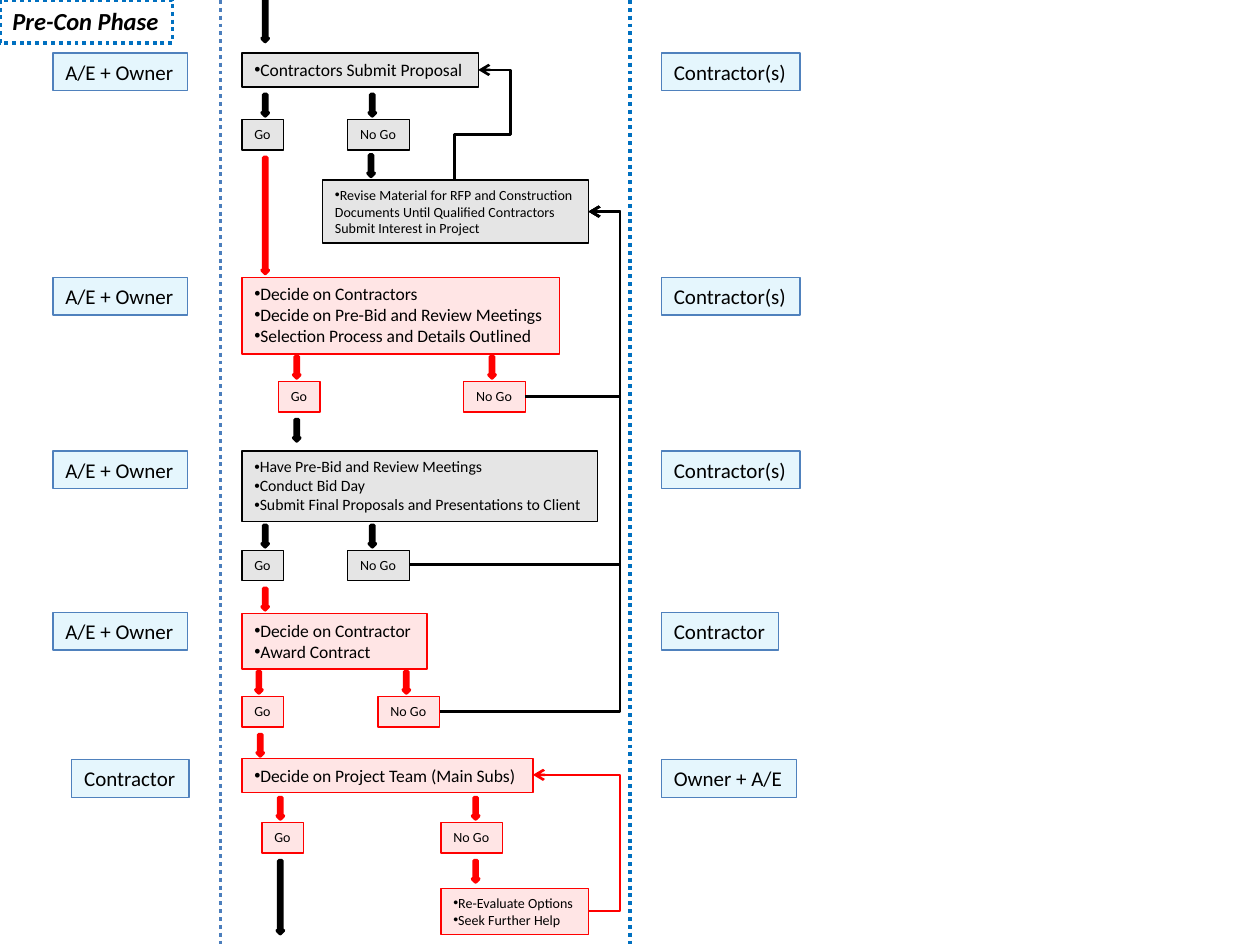
import dataclasses

import pptx
import pptx.dml.color
import pptx.enum.dml
import pptx.enum.shapes
import pptx.enum.text
import pptx.oxml.ns
import pptx.util
from lxml import etree
from pptx.util import Inches

qn = pptx.oxml.ns.qn


@dataclasses.dataclass(frozen=True)
class Theme:
    font: str = "Calibri"
    black: str = "000000"
    red: str = "FF0000"
    role_fill: str = "00B0F0"
    role_line: str = "4F81BD"
    left_divider: str = "4B7EBC"
    blue: str = "0070C0"
    tint: int = 10
    title: int = 14
    role: int = 12
    step: int = 10
    meeting: int = 9
    small: int = 8
    thin: float = 0.75
    route: float = 1.5
    arrow: float = 2
    dotted: float = 2.25


THEME = Theme()
STEP_LEFT = 1.92
RETURN_LANE = 4.92
ARROW_WIDTH, ARROW_HEIGHT = 0.05, 0.17


def rgb(color):
    return pptx.dml.color.RGBColor.from_string(color)


def set_fill(shape, color, opacity=100):
    shape.fill.solid()
    shape.fill.fore_color.rgb = rgb(color)
    if opacity < 100:
        color_element = shape.fill._xPr.find(qn("a:solidFill"))[0]
        etree.SubElement(color_element, qn("a:alpha"), val=str(opacity * 1000))


def set_line(shape, color, width, dotted=False):
    shape.line.color.rgb = rgb(color)
    shape.line.width = pptx.util.Pt(width)
    if dotted:
        shape.line.dash_style = pptx.enum.dml.MSO_LINE.ROUND_DOT


def add_text(frame, lines, size, bullets=0, bold=None, italic=None):
    """Write one paragraph per line; the first `bullets` of them get a bullet."""
    for index, line in enumerate(lines):
        paragraph = frame.paragraphs[0] if index == 0 else frame.add_paragraph()
        run = paragraph.add_run()
        run.text = line
        run.font.name = THEME.font
        run.font.size = pptx.util.Pt(size)
        run.font.color.rgb = rgb(THEME.black)
        run.font.bold, run.font.italic = bold, italic
        if index < bullets:
            properties = paragraph._p.get_or_add_pPr()
            etree.SubElement(properties, qn("a:buFont"), typeface="Arial")
            etree.SubElement(properties, qn("a:buChar"), char="•")


def add_box(slide, box, lines, size, line, fill=None, width=THEME.thin,
            dotted=False, **text_format):
    shape = slide.shapes.add_textbox(*map(Inches, box))
    if fill:
        set_fill(shape, fill, THEME.tint)
    set_line(shape, line, width, dotted)
    shape.text_frame.word_wrap = False
    shape.text_frame.auto_size = pptx.enum.text.MSO_AUTO_SIZE.SHAPE_TO_FIT_TEXT
    add_text(shape.text_frame, lines, size, **text_format)


def add_arrow(slide, left, top, color, height=ARROW_HEIGHT, fill=None, opacity=100):
    shape = slide.shapes.add_shape(
        pptx.enum.shapes.MSO_SHAPE.DOWN_ARROW,
        *map(Inches, (left, top, ARROW_WIDTH, height)))
    shape.shadow.inherit = False
    set_fill(shape, fill or color, opacity)
    set_line(shape, color, THEME.arrow)


def add_line(slide, kind, begin, end, color, width, dotted=False):
    connector = slide.shapes.add_connector(kind, *map(Inches, (*begin, *end)))
    set_line(connector, color, width, dotted)
    etree.SubElement(connector._element.spPr, qn("a:effectLst"))
    return connector


def add_divider(slide, x, color):
    add_line(slide, pptx.enum.shapes.MSO_CONNECTOR.STRAIGHT, (x, 0), (x, 7.5),
             color, THEME.dotted, dotted=True)


def add_route(slide, begin, end, color, bends, rotation=0):
    """Elbow connector with an open arrowhead; bends are fractions of its extent."""
    connector = add_line(slide, pptx.enum.shapes.MSO_CONNECTOR.ELBOW, begin, end,
                         color, THEME.route)
    properties = connector._element.spPr
    etree.SubElement(properties.find(qn("a:ln")), qn("a:tailEnd"), type="arrow")
    geometry = properties.find(qn("a:prstGeom"))
    geometry.set("prst", f"bentConnector{len(bends) + 2}")
    guides = geometry.find(qn("a:avLst"))
    for number, bend in enumerate(bends, 1):
        etree.SubElement(guides, qn("a:gd"), name=f"adj{number}",
                         fmla=f"val {round(bend * 100000)}")
    if rotation:
        properties.find(qn("a:xfrm")).set("rot", str(rotation * 60000))


def add_return(slide, begin, end, color):
    """Route that travels along the shared lane right of the steps."""
    bend = (RETURN_LANE - begin[0]) / (end[0] - begin[0])
    add_route(slide, begin, end, color, [bend])


def add_roles(slide, top, left_role, right_role):
    """Role labels on both sides of one step; each is (text, left, width)."""
    for text, left, width in (left_role, right_role):
        add_box(slide, (left, top, width, 0.3), [text], THEME.role,
                THEME.role_line, THEME.role_fill)


def add_step(slide, box, lines, size, color, gate_top, go, no_go):
    """Step box with its Go / No Go gate; go and no_go are (arrow left, box left)."""
    add_box(slide, box, lines, size, color, color, bullets=len(lines))
    for text, width, (arrow_left, left) in (("Go", 0.33, go), ("No Go", 0.49, no_go)):
        add_arrow(slide, arrow_left, gate_top, color)
        add_box(slide, (left, gate_top + 0.2, width, 0.24), [text], THEME.small,
                color, color)


def add_flow(slide):
    black, red = THEME.black, THEME.red
    # Steps: top, width, height, lines, size, color, gate top, go, no go
    steps = [
        (0.42, 1.88, 0.27, ["Contractors Submit Proposal"],
         THEME.step, black, 0.75, (2.08, 1.92), (2.93, 2.76)),
        (2.2, 2.52, 0.61, ["Decide on Contractors",
                           "Decide on Pre-Bid and Review Meetings",
                           "Selection Process and Details Outlined"],
         THEME.step, red, 2.83, (2.33, 2.21), (3.88, 3.68)),
        (3.58, 2.82, 0.56, ["Have Pre-Bid and Review Meetings", "Conduct Bid Day",
                            "Submit Final Proposals and Presentations to Client"],
         THEME.meeting, black, 4.17, (2.08, 1.92), (2.93, 2.76)),
        (4.87, 1.47, 0.44, ["Decide on Contractor", "Award Contract"],
         THEME.step, red, 5.33, (2.03, 1.92), (3.2, 3)),
        (6.02, 2.31, 0.27, ["Decide on Project Team (Main Subs)"],
         THEME.step, red, 6.33, (2.2, 2.08), (3.75, 3.5)),
    ]
    for top, width, height, *details in steps:
        add_step(slide, (STEP_LEFT, top, width, height), *details)

    # Arrows into and out of the steps
    add_arrow(slide, 2.08, 0, black, height=0.33)
    add_arrow(slide, 2.08, 1.25, red, height=0.92, opacity=THEME.tint)
    add_arrow(slide, 2.92, 1.23, black, fill=THEME.role_fill, opacity=THEME.tint)
    add_arrow(slide, 2.33, 3.33, black)
    add_arrow(slide, 2.08, 4.67, red)
    add_arrow(slide, 2.04, 5.83, red)
    add_arrow(slide, 3.75, 6.83, red)
    add_arrow(slide, 2.2, 6.83, black, height=0.58, fill=red)

    # Fallback boxes
    add_box(slide, (2.56, 1.43, 2.11, 0.5),
            ["Revise Material for RFP and Construction",
             "Documents Until Qualified Contractors",
             "Submit Interest in Project"], THEME.small, black, black, bullets=1)
    add_box(slide, (3.5, 7.05, 1.17, 0.37),
            ["Re-Evaluate Options", "Seek Further Help"],
            THEME.small, red, red, bullets=2)

    # Return routes
    add_route(slide, (4.14, 1.09), (3.26, 0.9), black, [0.42, 2.34], rotation=90)
    for begin in ((4.17, 3.15), (3.25, 4.48), (3.49, 5.65)):
        add_return(slide, begin, (4.67, 1.68), black)
    add_return(slide, (4.67, 7.23), (4.23, 6.15), red)


def main():
    presentation = pptx.Presentation()
    presentation.slide_width, presentation.slide_height = Inches(10), Inches(7.5)
    slide = presentation.slides.add_slide(presentation.slide_layouts[6])

    # Lanes and phase title
    add_divider(slide, 1.75, THEME.left_divider)
    add_divider(slide, 5, THEME.blue)
    add_box(slide, (0, 0, 1.37, 0.34), ["Pre-Con Phase"], THEME.title, THEME.blue,
            width=THEME.dotted, dotted=True, bold=True, italic=True)

    # Role labels
    owner, contractors = ("A/E + Owner", 0.42, 1.07), ("Contractor(s)", 5.25, 1.1)
    for top in (0.42, 2.2, 3.58):
        add_roles(slide, top, owner, contractors)
    add_roles(slide, 4.86, owner, ("Contractor", 5.25, 0.93))
    add_roles(slide, 6.03, ("Contractor", 0.57, 0.93), ("Owner + A/E", 5.25, 1.07))

    add_flow(slide)
    presentation.save("out.pptx")


if __name__ == "__main__":
    main()
